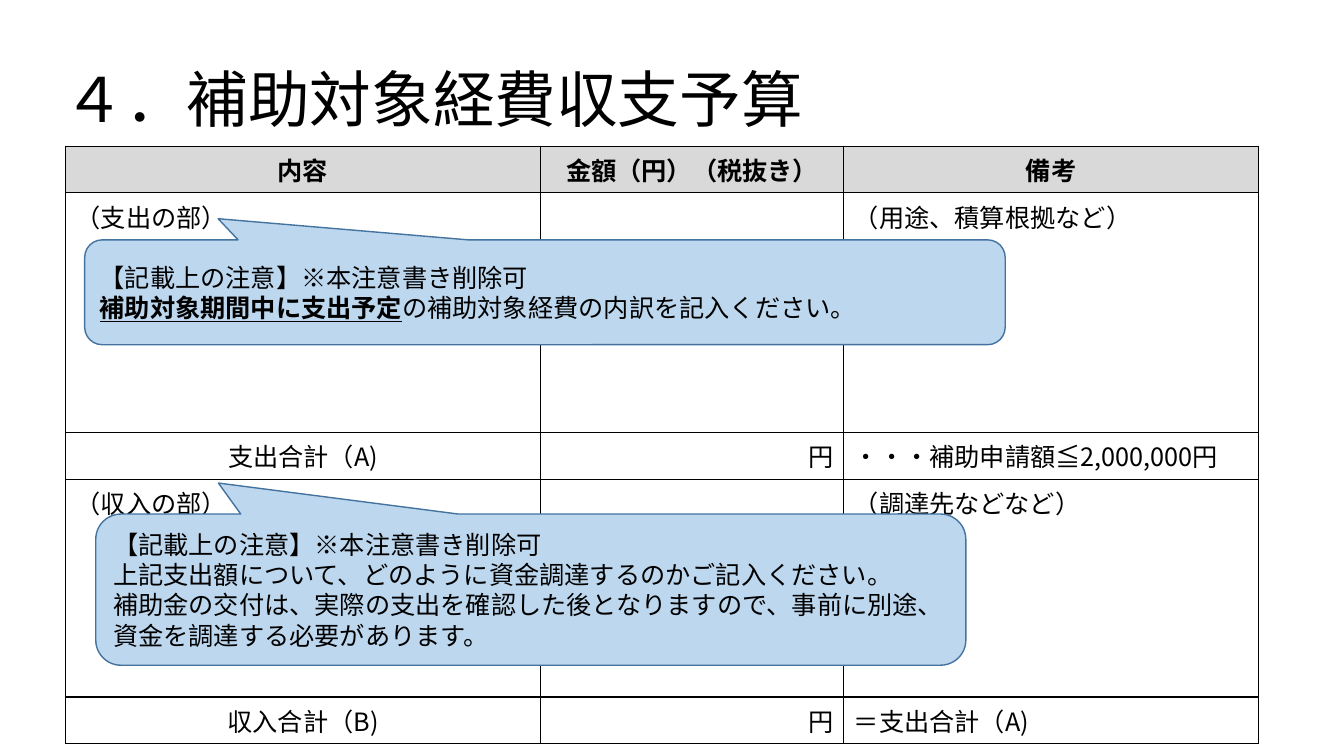
from lxml import etree
from pptx import Presentation, util as u
from pptx.dml.color import RGBColor
from pptx.enum import shapes, text
from pptx.oxml import ns

BLACK = RGBColor(0x00, 0x00, 0x00)
HEADER_GREY = RGBColor(0xD9, 0xD9, 0xD9)
NOTE_BLUE = RGBColor(0xBD, 0xD7, 0xEE)
NOTE_EDGE = RGBColor(0x43, 0x73, 0x9E)
FONT = "Noto Sans CJK JP"
LEFT, CENTER, RIGHT = text.PP_ALIGN.LEFT, text.PP_ALIGN.CENTER, text.PP_ALIGN.RIGHT


def write(paragraph, words, size=18, bold=False, underline=False, align=LEFT):
    paragraph.alignment = align
    run = paragraph.add_run()
    run.text = words
    run.font.name = FONT
    run.font.size = u.Pt(size)
    run.font.bold = bold
    run.font.underline = underline
    run.font.color.rgb = BLACK
    east_asian = etree.Element(ns.qn("a:ea"), typeface=FONT)
    run.font._element.find(ns.qn("a:latin")).addnext(east_asian)


def add_borders(cell):
    properties = cell._tc.get_or_add_tcPr()
    for side in ("lnL", "lnR", "lnT", "lnB"):
        line = etree.SubElement(properties, ns.qn(f"a:{side}"), w=str(u.Pt(1)))
        fill = etree.SubElement(line, ns.qn("a:solidFill"))
        etree.SubElement(fill, ns.qn("a:srgbClr"), val=str(BLACK))


prs = Presentation()
prs.slide_width, prs.slide_height = u.Inches(13.33), u.Inches(7.5)
slide = prs.slides.add_slide(prs.slide_layouts[5])

heading = slide.shapes.title
heading.left, heading.top = u.Inches(0.53), u.Inches(0.29)
heading.width, heading.height = u.Inches(11.5), u.Inches(1.45)
heading.text_frame.vertical_anchor = text.MSO_ANCHOR.MIDDLE
heading.text_frame.paragraphs[0].line_spacing = 0.9
write(heading.text_frame.paragraphs[0], "４．補助対象経費収支予算", size=44)

column_widths = [4.71, 3.01, 4.11]
LINE_ROW = 0.46
row_heights = [LINE_ROW, 2.38, LINE_ROW, 2.16, LINE_ROW]
budget_rows = [
    ["内容", "金額（円）（税抜き）", "備考"],
    ["（支出の部）", "", "（用途、積算根拠など）"],
    ["支出合計（A)", "円", "・・・補助申請額≦2,000,000円"],
    ["（収入の部）", "", "（調達先などなど）"],
    ["収入合計（B)", "円", "＝支出合計（A)"],
]
header_aligns = [CENTER, CENTER, CENTER]
section_aligns = [LEFT, LEFT, LEFT]
total_aligns = [CENTER, RIGHT, LEFT]
row_aligns = [header_aligns, section_aligns, total_aligns, section_aligns, total_aligns]

budget = slide.shapes.add_table(
    len(row_heights), len(column_widths), u.Inches(0.65), u.Inches(1.45),
    u.Inches(sum(column_widths)), u.Inches(sum(row_heights))).table
budget.first_row = budget.horz_banding = False
for column, width in zip(budget.columns, column_widths):
    column.width = u.Inches(width)
for row, height in zip(budget.rows, row_heights):
    row.height = u.Inches(height)

for r, (entries, aligns) in enumerate(zip(budget_rows, row_aligns)):
    for c, (entry, align) in enumerate(zip(entries, aligns)):
        cell = budget.cell(r, c)
        add_borders(cell)
        if r == 0:
            cell.fill.solid()
            cell.fill.fore_color.rgb = HEADER_GREY
        else:
            cell.fill.background()
        if entry:
            write(cell.text_frame.paragraphs[0], entry, bold=r == 0, align=align)

NOTE_TITLE = [("【記載上の注意】※本注意書き削除可", False)]
notes = [
    ((0.84, 2.38, 9.13, 1.04), (-0.355, -0.702), [
        NOTE_TITLE,
        [("補助対象期間中に支出予定", True), ("の補助対象経費の内訳を記入ください。", False)],
    ]),
    ((0.95, 5.1, 8.63, 1.5), (-0.359, -0.705), [
        NOTE_TITLE,
        [("上記支出額について、どのように資金調達するのかご記入ください。", False)],
        [("補助金の交付は、実際の支出を確認した後となりますので、事前に別途、"
          "資金を調達する必要があります。", False)],
    ]),
]
for box, pointer, lines in notes:
    note = slide.shapes.add_shape(
        shapes.MSO_SHAPE.ROUNDED_RECTANGULAR_CALLOUT, *map(u.Inches, box))
    note.adjustments[0], note.adjustments[1] = pointer
    note.shadow.inherit = False
    note.fill.solid()
    note.fill.fore_color.rgb = NOTE_BLUE
    note.line.color.rgb = NOTE_EDGE
    note.line.width = u.Pt(1)
    frame = note.text_frame
    frame.word_wrap = True
    frame.vertical_anchor = text.MSO_ANCHOR.MIDDLE
    for i, line in enumerate(lines):
        paragraph = frame.add_paragraph() if i else frame.paragraphs[0]
        for words, stressed in line:
            write(paragraph, words, bold=stressed, underline=stressed)

prs.save("out.pptx")
